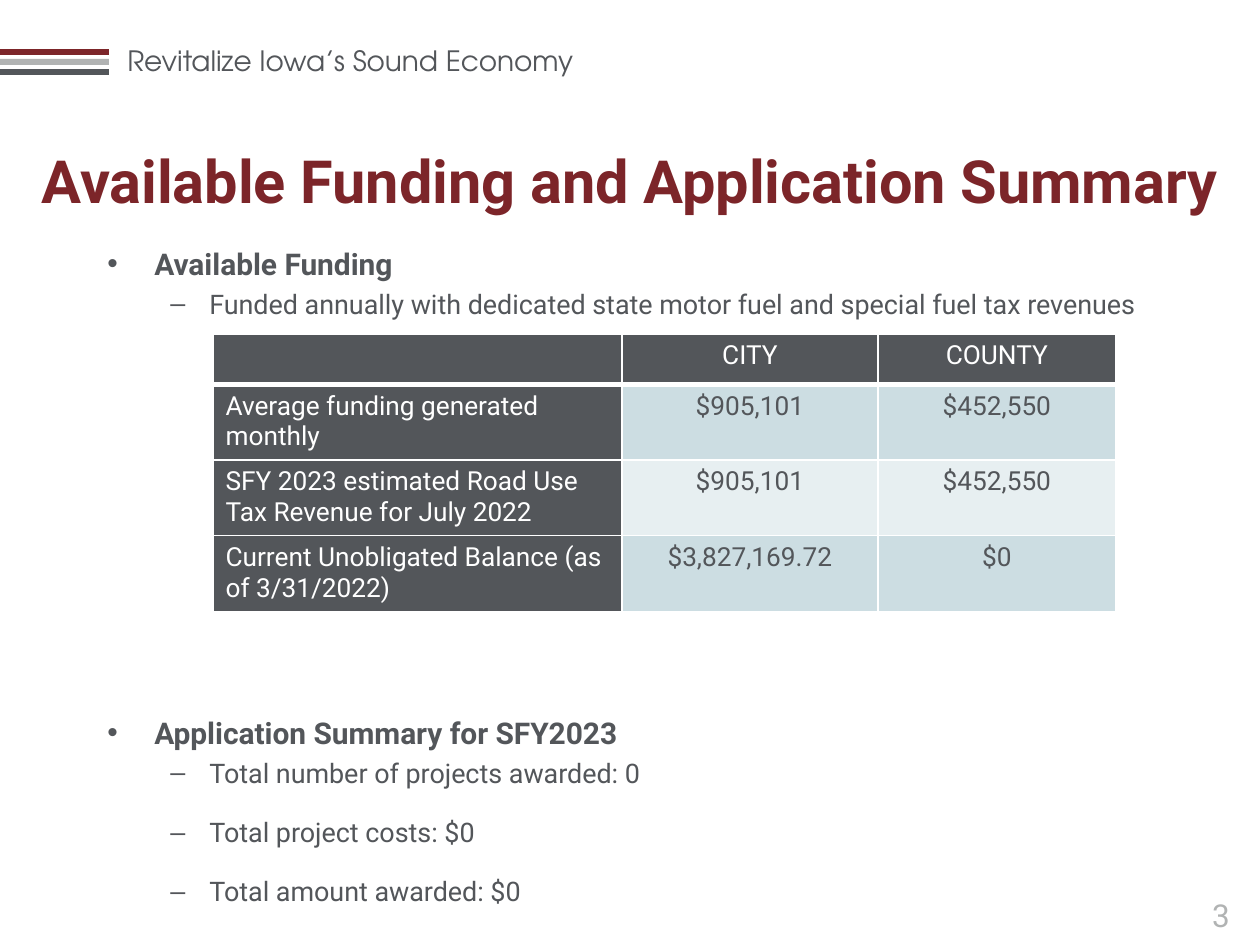
from lxml.etree import SubElement
from pptx import Presentation
from pptx.dml.color import RGBColor as Rgb
from pptx.enum.shapes import MSO_SHAPE as Shape
from pptx.enum.text import MSO_ANCHOR as Anchor, PP_ALIGN as Align
from pptx.oxml.ns import qn
from pptx.util import Pt

COLORS = {
    "red": "7C2529",
    "silver": "B1B3B3",
    "slate": "53565A",
    "white": "FFFFFF",
    "blue": "CCDDE2",
    "pale": "E7EFF1",
}
ROWS = [
    ("", "CITY", "COUNTY"),
    ("Average funding generated monthly", "$905,101", "$452,550"),
    ("SFY 2023 estimated Road Use Tax Revenue for July 2022", "$905,101", "$452,550"),
    ("Current Unobligated Balance (as of 3/31/2022)", "$3,827,169.72", "$0"),
]


def px(n):
    return round(n * 914400 / 126)


def box(slide, rect, anchor=Anchor.TOP):
    frame = slide.shapes.add_textbox(*map(px, rect)).text_frame
    frame.word_wrap = True
    frame.vertical_anchor = anchor
    return frame


def write(para, text, size=15, color="slate", face="Roboto", bold=False, align=Align.LEFT):
    para.alignment = align
    run = para.add_run()
    run.text = text
    font = run.font
    font.size = Pt(size)
    font.name = face
    font.bold = bold
    font.color.rgb = Rgb.from_string(COLORS[color])


def bullet(para, char, left, hang):
    props = para._p.get_or_add_pPr()
    props.set("marL", str(px(left)))
    props.set("indent", str(-px(hang)))
    SubElement(props, qn("a:buFont"), typeface="Arial")
    SubElement(props, qn("a:buChar"), char=char)


def outline(slide, rect, head, items):
    frame = box(slide, rect)
    para = frame.paragraphs[0]
    bullet(para, "•", 47, 47)
    write(para, head, size=17.1, bold=True)
    for item in items:
        para = frame.add_paragraph()
        bullet(para, "–", 102, 39)
        para.space_before = Pt(3.5)
        para.space_after = Pt(12)
        write(para, item, size=15.4)


def bar(slide, top, color):
    shape = slide.shapes.add_shape(Shape.RECTANGLE, 0, px(top), px(109), px(6))
    shape.shadow.inherit = False
    shape.fill.solid()
    shape.fill.fore_color.rgb = Rgb.from_string(COLORS[color])
    shape.line.fill.background()


def border(cell, side, width):
    line = SubElement(cell._tc.get_or_add_tcPr(), qn("a:" + side), w=str(Pt(width)))
    fill = SubElement(line, qn("a:solidFill"))
    SubElement(fill, qn("a:srgbClr"), val=COLORS["white"])


def fund_table(slide):
    cols, highs = (409, 256, 238), (49, 74, 74, 74)
    rect = 213, 334, sum(cols), sum(highs)
    table = slide.shapes.add_table(len(ROWS), len(cols), *map(px, rect)).table
    for col, width in zip(table.columns, cols):
        col.width = px(width)
    for r, row in enumerate(ROWS):
        table.rows[r].height = px(highs[r])
        for c, text in enumerate(row):
            cell = table.cell(r, c)
            dark = r == 0 or c == 0
            for side in ("lnL", "lnR", "lnT", "lnB"):
                heavy = (r, side) in ((0, "lnB"), (1, "lnT"))
                border(cell, side, 3 if heavy else 1)
            tint = "slate" if dark else "blue" if r % 2 else "pale"
            cell.fill.solid()
            cell.fill.fore_color.rgb = Rgb.from_string(COLORS[tint])
            if text:
                write(cell.text_frame.paragraphs[0], text,
                      color="white" if dark else "slate",
                      align=Align.CENTER if c else Align.LEFT)


def main():
    deck = Presentation()
    deck.slide_width, deck.slide_height = px(1260), px(945)
    slide = deck.slides.add_slide(deck.slide_layouts[6])
    write(box(slide, (115, 37, 515, 47)).paragraphs[0],
          "Revitalize Iowa’s Sound Economy", size=16, face="TeX Gyre Adventor")
    for i, color in enumerate(("red", "silver", "slate")):
        bar(slide, 49 + 10 * i, color)
    write(box(slide, (1166, 890, 110, 50)).paragraphs[0], "3",
          size=18, color="silver", align=Align.CENTER)
    write(box(slide, (15, 155, 1230, 49), Anchor.MIDDLE).paragraphs[0],
          "Available Funding and Application Summary",
          size=34, color="red", bold=True, align=Align.CENTER)
    outline(slide, (95, 239, 1071, 90), "Available Funding",
            ["Funded annually with dedicated state motor fuel and special fuel tax revenues"])
    outline(slide, (95, 708, 1071, 237), "Application Summary for SFY2023",
            ["Total number of projects awarded: 0",
             "Total project costs: $0",
             "Total amount awarded: $0"])
    fund_table(slide)
    deck.save("out.pptx")


if __name__ == "__main__":
    main()
